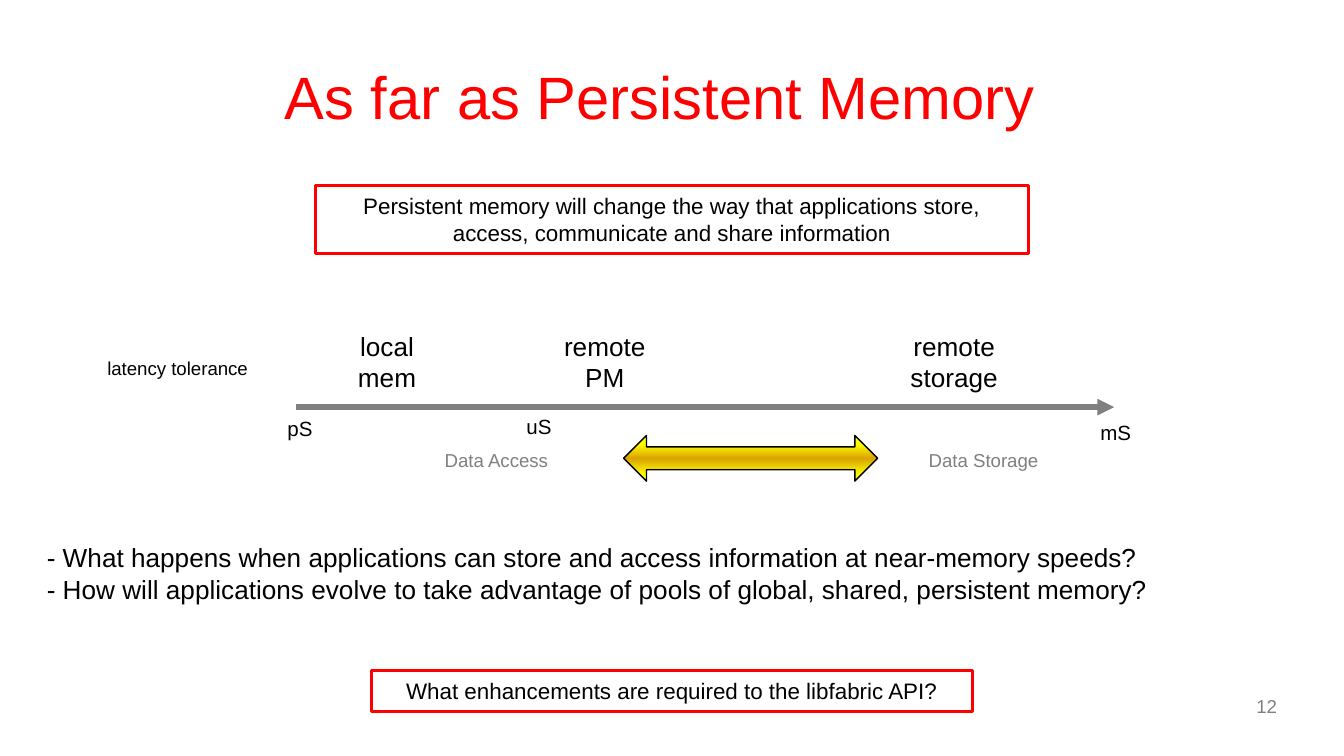
from pptx import Presentation
from pptx.dml.color import RGBColor
from pptx.enum.shapes import MSO_CONNECTOR, MSO_SHAPE
from pptx.enum.text import MSO_ANCHOR, PP_ALIGN
from pptx.oxml.ns import qn
from pptx.util import Pt
from lxml import etree

RED = RGBColor(0xFF, 0x00, 0x00)
BLACK = RGBColor(0x00, 0x00, 0x00)
GRAY = RGBColor(0x80, 0x80, 0x80)
YELLOW = RGBColor(0xFF, 0xFF, 0x00)
GOLD = RGBColor(0xD9, 0xA3, 0x00)
FONT = "Arial"


def write(sp, text, size, color=BLACK, align=PP_ALIGN.LEFT,
          anchor=MSO_ANCHOR.TOP, wrap=True):
    tf = sp.text_frame
    tf.text = text
    tf.word_wrap = wrap
    tf.vertical_anchor = anchor
    for p in tf.paragraphs:
        p.alignment = align
        for r in p.runs:
            r.font.name = FONT
            r.font.size = Pt(size)
            r.font.color.rgb = color


def add_label(s, box, text, size, **style):
    write(s.shapes.add_textbox(*map(Pt, box)), text, size, **style)


def add_callout(s, box, text):
    sp = s.shapes.add_shape(MSO_SHAPE.RECTANGLE, *map(Pt, box))
    sp.shadow.inherit = False
    sp.fill.background()
    sp.line.color.rgb = RED
    sp.line.width = Pt(1.5)
    write(sp, text, 12, align=PP_ALIGN.CENTER, anchor=MSO_ANCHOR.MIDDLE)


def add_axis(s, x, y, width):
    line = s.shapes.add_connector(MSO_CONNECTOR.STRAIGHT,
                                  Pt(x), Pt(y), Pt(x + width), Pt(y))
    line.line.color.rgb = GRAY
    line.line.width = Pt(3)
    ln = line.line._get_or_add_ln()
    etree.SubElement(ln, qn("a:tailEnd"), type="triangle")
    etree.SubElement(line._element.spPr, qn("a:effectLst"))


def add_range_arrow(s, box):
    sp = s.shapes.add_shape(MSO_SHAPE.LEFT_RIGHT_ARROW, *map(Pt, box))
    sp.shadow.inherit = False
    sp.fill.gradient()
    sp.fill.gradient_angle = 270
    stops = sp._element.spPr.find(qn("a:gradFill")).find(qn("a:gsLst"))
    for gs in list(stops):
        stops.remove(gs)
    for pos, color in ((19, YELLOW), (50, GOLD), (87, YELLOW)):
        gs = etree.SubElement(stops, qn("a:gs"), pos=str(pos * 1000))
        etree.SubElement(gs, qn("a:srgbClr"), val=str(color))
    sp.line.color.rgb = BLACK
    sp.line.width = Pt(0.75)


def add_latency_scale(s, x, y, width, height):
    axis_x, axis_y = x + 108, y + 44.6
    add_axis(s, axis_x, axis_y, width - 108)
    add_label(s, (x, y + 14.4, 110.9, 19.4), "latency tolerance", 10)
    for text, center, w in (("local mem", 49, 52), ("remote PM", 165.6, 66.2),
                            ("remote storage", 352.8, 86.4)):
        add_label(s, (axis_x + center - w / 2, y, w, 41), text, 14,
                  align=PP_ALIGN.CENTER)
    for text, dx, dy, w in (("pS", -11.5, 1.4, 28), ("uS", 116.6, 0, 28),
                            ("mS", 424, 3.6, 31)):
        add_label(s, (axis_x + dx, axis_y + dy, w, 20.9), text, 11, wrap=False)
    band_y = y + height - 28.8
    for text, dx in (("Data Access", 72.7), ("Data Storage", 332)):
        add_label(s, (axis_x + dx, band_y, 118, 28.8), text, 10, color=GRAY)
    add_range_arrow(s, (axis_x + 175.7, band_y - 3.6, 136.1, 24.5))


def build_slide(s, width, height):
    add_label(s, (145.4, 17.3, 519.8, 67.7), "As far as Persistent Memory", 32,
              color=RED, anchor=MSO_ANCHOR.MIDDLE)
    add_label(s, (541.4, height - 36.4, 149.8, 27.4), "12", 10, color=GRAY,
              align=PP_ALIGN.RIGHT)
    add_latency_scale(s, 50.4, 173.5, 546.5, 92.2)
    add_label(s, (18, 286.6, width - 36, 41),
              "- What happens when applications can store and access "
              "information at near-memory speeds?\n"
              "- How will applications evolve to take advantage of pools of "
              "global, shared, persistent memory?", 14)
    add_callout(s, (168.8, 99.4, 382.3, 36.4),
                "Persistent memory will change the way that applications "
                "store, access, communicate and share information")
    add_callout(s, (199.1, 359.3, 321.8, 21.8),
                "What enhancements are required to the libfabric API?")


def main():
    prs = Presentation()
    prs.slide_width, prs.slide_height = Pt(720), Pt(405)
    s = prs.slides.add_slide(prs.slide_layouts[6])
    build_slide(s, 720, 405)
    prs.save("out.pptx")


if __name__ == "__main__":
    main()
